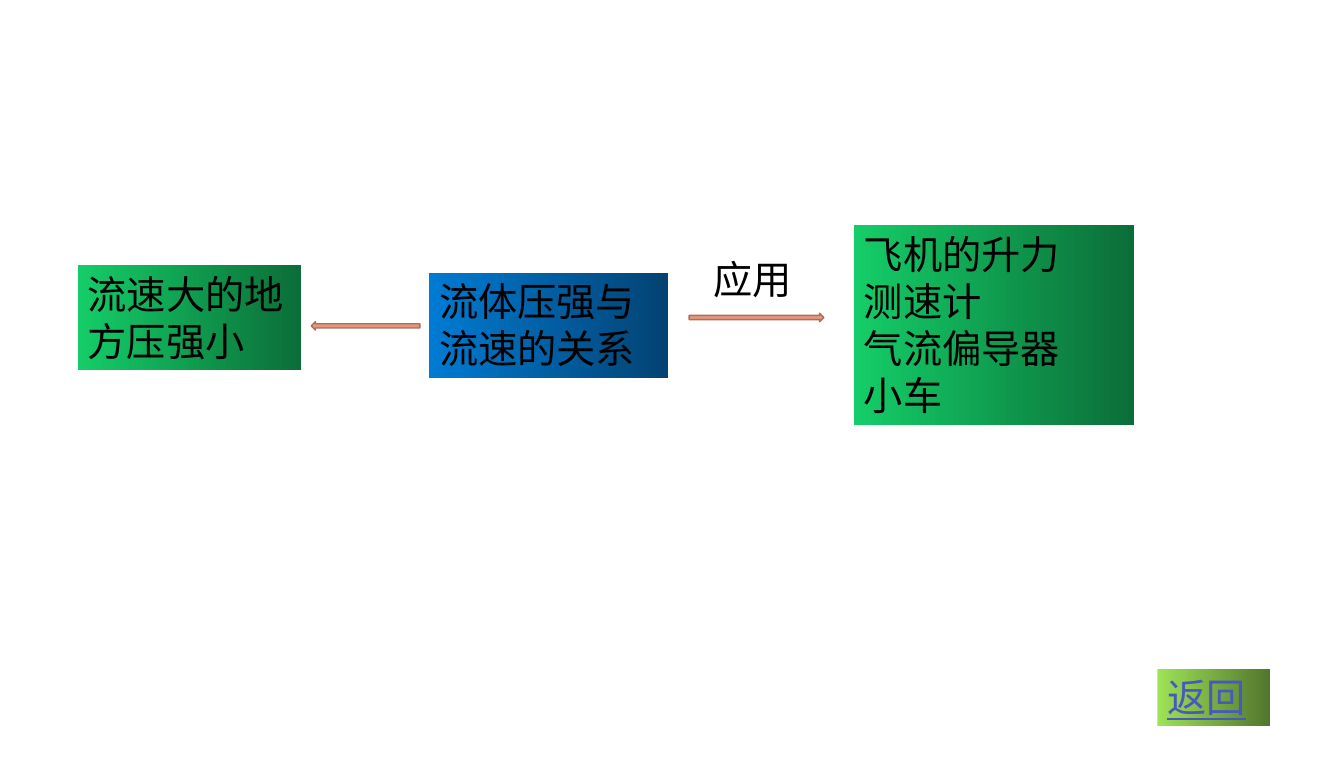
from dataclasses import dataclass

from pptx import Presentation
from pptx.dml.color import RGBColor
from pptx.enum.shapes import MSO_SHAPE
from pptx.enum.text import MSO_ANCHOR, PP_ALIGN
from pptx.util import Pt


@dataclass(frozen=True)
class Theme:
    font: str = "Arial"
    size: int = 28
    ink: str = "000000"
    link: str = "4759BF"
    blue: tuple = ("007BD3", "034373")
    green: tuple = ("14CD68", "0B6E38")
    lime: tuple = ("9EE256", "52762D")
    arrow: str = "E5967C"
    edge: str = "A96F5C"


THEME = Theme()


def color(code):
    return RGBColor.from_string(code)


def write(shape, lines, ink=THEME.ink, under=None):
    """Fill a shape with left-aligned lines, one paragraph each."""
    frame = shape.text_frame
    frame.word_wrap = True
    frame.vertical_anchor = MSO_ANCHOR.TOP
    for i, line in enumerate(lines):
        para = frame.add_paragraph() if i else frame.paragraphs[0]
        para.alignment = PP_ALIGN.LEFT
        run = para.add_run()
        run.text = line
        run.font.name = THEME.font
        run.font.size = Pt(THEME.size)
        run.font.color.rgb = color(ink)
        run.font.underline = under


def add_form(slide, kind, place):
    shape = slide.shapes.add_shape(kind, *map(Pt, place))
    shape.shadow.inherit = False
    return shape


def add_box(slide, place, shades, lines, **style):
    """Add a borderless box shaded from left to right."""
    box = add_form(slide, MSO_SHAPE.RECTANGLE, place)
    box.fill.gradient()
    box.fill.gradient_angle = 0
    for stop, shade in zip(box.fill.gradient_stops, shades):
        stop.color.rgb = color(shade)
    box.line.fill.background()
    write(box, lines, **style)


def add_arrow(slide, kind, place):
    arrow = add_form(slide, kind, place)
    arrow.fill.solid()
    arrow.fill.fore_color.rgb = color(THEME.arrow)
    arrow.line.color.rgb = color(THEME.edge)
    arrow.line.width = Pt(1)


def add_label(slide, place, text):
    write(slide.shapes.add_textbox(*map(Pt, place)), [text])


def main():
    deck = Presentation()
    deck.slide_width, deck.slide_height = Pt(958.5), Pt(540)
    slide = deck.slides.add_slide(deck.slide_layouts[6])

    # Central topic
    add_box(slide, (306, 194.5, 170.5, 75), THEME.blue,
            ["流体压强与流速的关系"])

    # Principle on the left
    add_arrow(slide, MSO_SHAPE.LEFT_ARROW, (222, 229.5, 77.5, 6))
    add_box(slide, (55.5, 189, 159, 75), THEME.green,
            ["流速大的地方压强小"])

    # Applications on the right
    add_arrow(slide, MSO_SHAPE.RIGHT_ARROW, (491.5, 223.5, 96, 6))
    add_label(slide, (501.5, 178.5, 97, 41), "应用")
    add_box(slide, (609, 160.5, 199.5, 142.5), THEME.green,
            ["飞机的升力", "测速计", "气流偏导器", "小车"])

    # Return button
    add_box(slide, (825.5, 477, 80.5, 41), THEME.lime, ["返回"],
            ink=THEME.link, under=True)

    deck.save("out.pptx")


if __name__ == "__main__":
    main()
